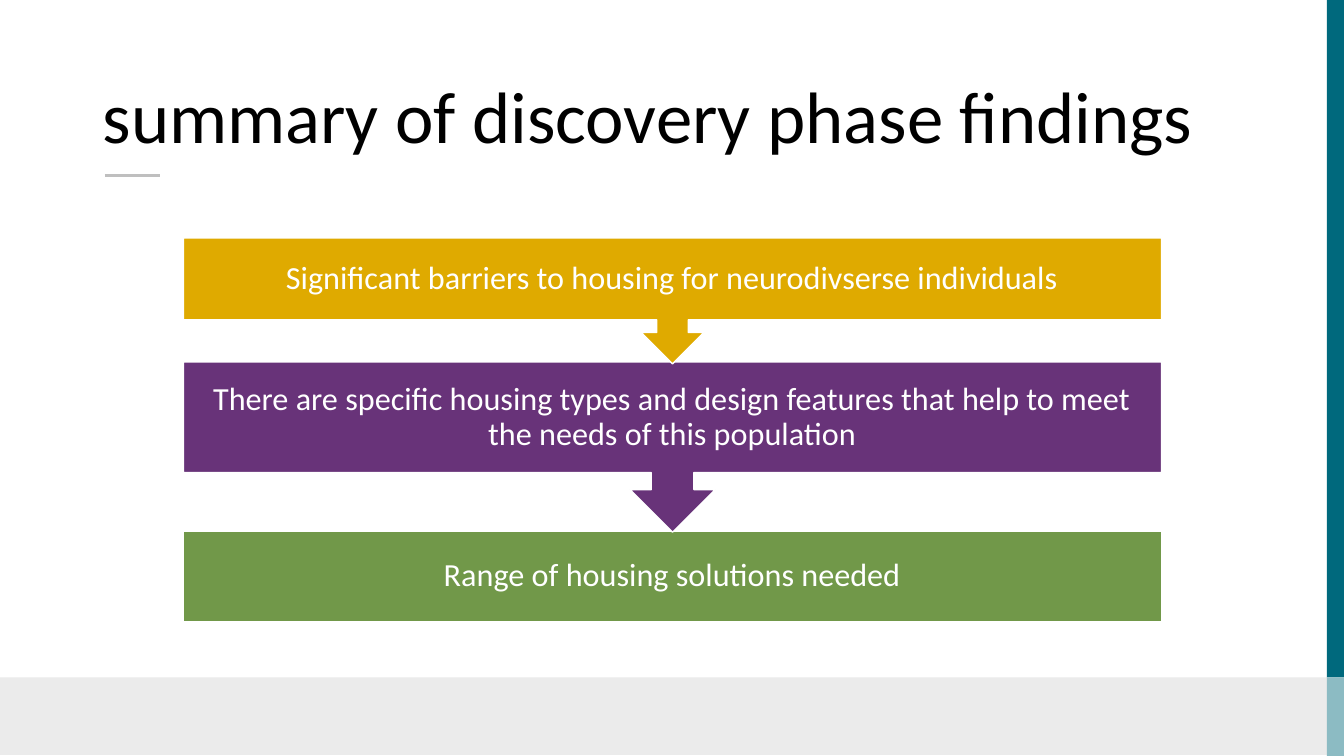
from pptx import Presentation
from pptx import util as u
from pptx.dml.color import RGBColor
from pptx.enum import shapes, text
from pptx.oxml.ns import qn
from lxml import etree

WHITE = RGBColor(0xFF, 0xFF, 0xFF)
BLACK = RGBColor(0x00, 0x00, 0x00)
TEAL = RGBColor(0x00, 0x69, 0x7D)
PALE_TEAL = RGBColor(0x8C, 0xBB, 0xC3)
PALE_GRAY = RGBColor(0xEB, 0xEB, 0xEB)
RULE_GRAY = RGBColor(0xBF, 0xBF, 0xBF)
GOLD = RGBColor(0xDF, 0xAA, 0x00)
PURPLE = RGBColor(0x68, 0x33, 0x79)
GREEN = RGBColor(0x71, 0x98, 0x49)

RECT = shapes.MSO_SHAPE.RECTANGLE
CALLOUT = shapes.MSO_SHAPE.UP_ARROW_CALLOUT


def apply(target, values):
    for name, value in values.items():
        setattr(target, name, value)


class FindingsSlide:
    """Hold the slide and its style, with one method per kind of element."""

    font = "Calibri"

    def __init__(self, s):
        self.s = s

    def block(self, kind, box, color, outline=None, rotation=0):
        sp = self.s.shapes.add_shape(kind, *map(u.Inches, box))
        sp.shadow.inherit = False
        sp.rotation = rotation
        sp.fill.solid()
        sp.fill.fore_color.rgb = color
        if outline is None:
            sp.line.fill.background()
        else:
            sp.line.color.rgb = outline
            sp.line.width = u.Pt(1)

    def rule(self, x1, x2, y, color):
        ends = map(u.Inches, (x1, y, x2, y))
        cn = self.s.shapes.add_connector(shapes.MSO_CONNECTOR.STRAIGHT, *ends)
        cn.line.color.rgb = color
        cn.line.width = u.Pt(2.25)
        etree.SubElement(cn._element.spPr, qn("a:effectLst"))

    def label(self, words, box, size, color, anchor, align, inset):
        tf = self.s.shapes.add_textbox(*map(u.Inches, box)).text_frame
        margins = ("margin_left", "margin_right", "margin_top", "margin_bottom")
        apply(tf, dict(zip(margins, map(u.Inches, inset))))
        apply(tf, {"word_wrap": True, "vertical_anchor": anchor})
        p = tf.paragraphs[0]
        apply(p, {"alignment": align, "line_spacing": 0.9})
        r = p.add_run()
        r.text = words
        apply(r.font, {"name": self.font, "size": u.Pt(size)})
        r.font.color.rgb = color

    def finding(self, words, top, height, text_height, kind, color):
        left, width = 1.82, 9.7
        rotation = 180 if kind == CALLOUT else 0
        self.block(kind, (left, top, width, height), color, WHITE, rotation)
        self.label(words, (left, top, width, text_height), 23, WHITE,
                   text.MSO_ANCHOR.MIDDLE, text.PP_ALIGN.CENTER, (0.18,) * 4)


def main():
    prs = Presentation()
    prs.slide_width, prs.slide_height = u.Inches(13.33), u.Inches(7.5)
    page = FindingsSlide(prs.slides.add_slide(prs.slide_layouts[6]))

    for box, color in (
        ((0, 6.72, 13.16, 0.77), PALE_GRAY),
        ((13.16, 0, 0.17, 6.72), TEAL),
        ((13.16, 6.72, 0.17, 0.78), PALE_TEAL),
    ):
        page.block(RECT, box, color)
    page.rule(1.04, 1.59, 1.74, RULE_GRAY)

    for finding in (
        ("Range of housing solutions needed", 5.27, 0.9, 0.9, RECT, GREEN),
        ("There are specific housing types and design features that help "
         "to meet the needs of this population", 3.59, 1.69, 1.1, CALLOUT, PURPLE),
        ("Significant barriers to housing for neurodivserse individuals",
         2.36, 1.25, 0.81, CALLOUT, GOLD),
    ):
        page.finding(*finding)

    page.label("summary of discovery phase findings", (0.92, 0.4, 11.5, 1.23),
               52, BLACK, text.MSO_ANCHOR.BOTTOM, text.PP_ALIGN.LEFT,
               (0.1, 0.1, 0.05, 0.05))
    prs.save("out.pptx")


if __name__ == "__main__":
    main()
